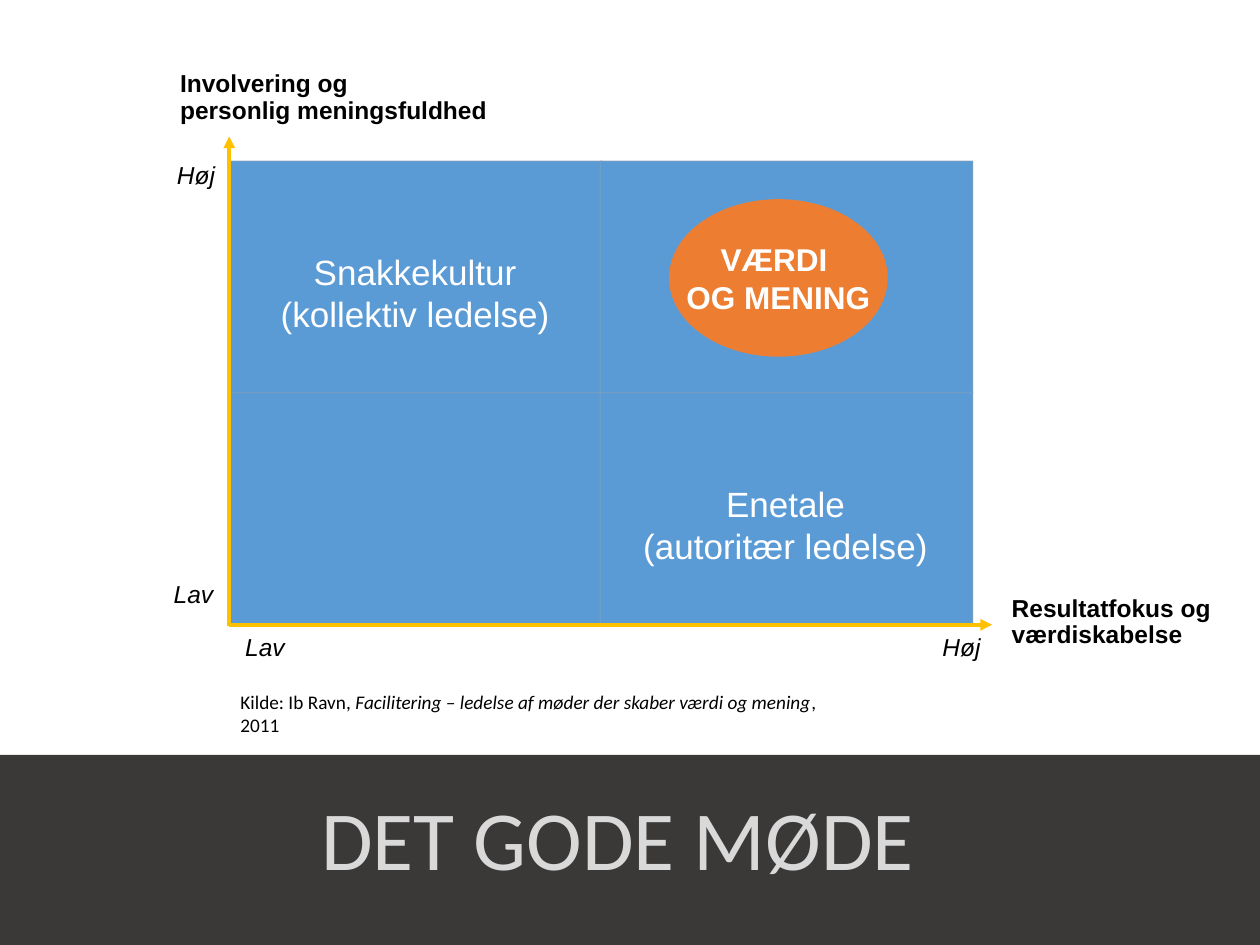
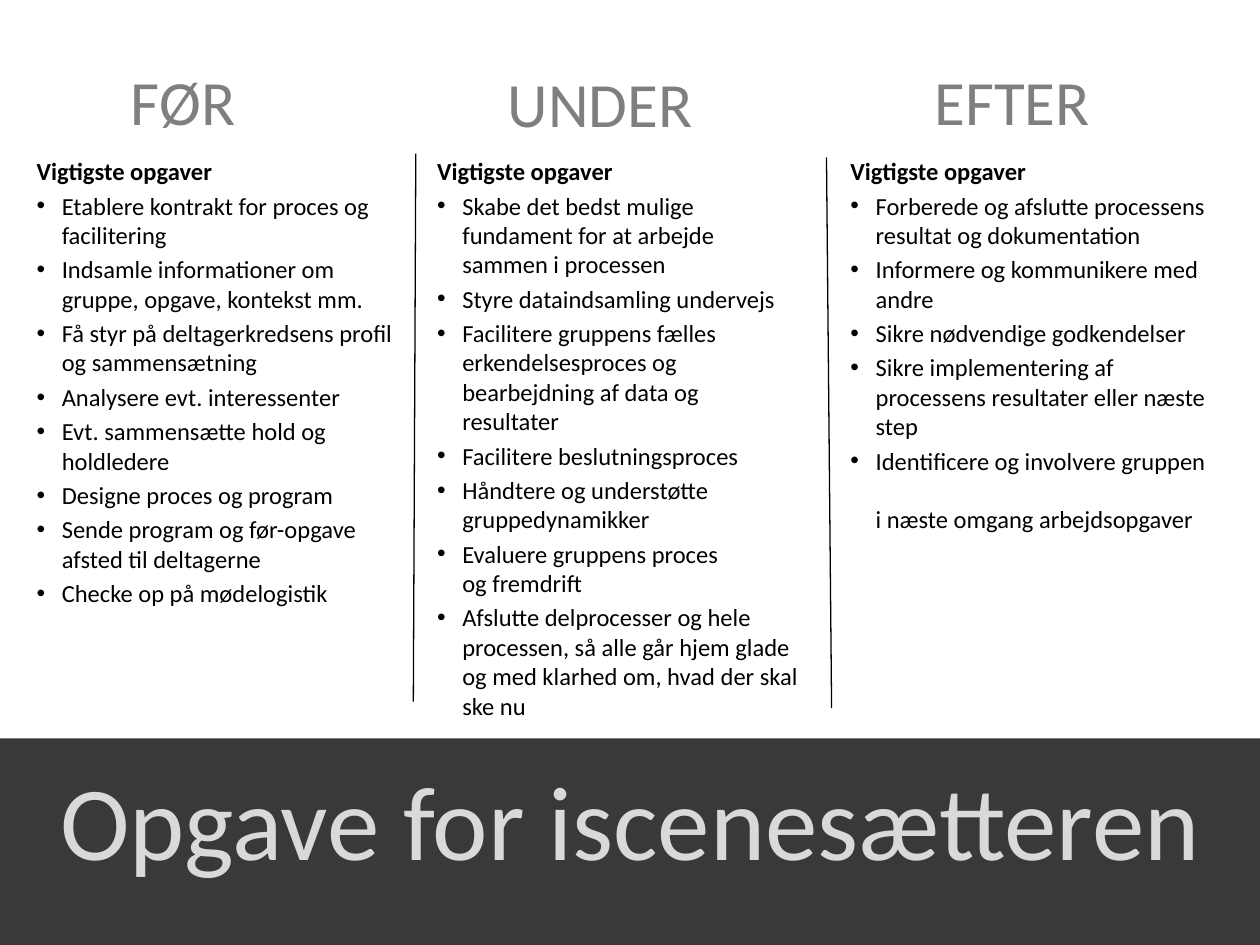
from copy import deepcopy

from lxml import etree
from pptx import Presentation
from pptx.dml.color import RGBColor
from pptx.enum.shapes import MSO_CONNECTOR, MSO_SHAPE
from pptx.enum.text import MSO_ANCHOR, MSO_AUTO_SIZE, PP_ALIGN
from pptx.oxml.ns import qn
from pptx.util import Pt

RECT, OVAL = MSO_SHAPE.RECTANGLE, MSO_SHAPE.OVAL
STRAIGHT = MSO_CONNECTOR.STRAIGHT
LEFT, CENTER, RIGHT = PP_ALIGN.LEFT, PP_ALIGN.CENTER, PP_ALIGN.RIGHT
MIDDLE = MSO_ANCHOR.MIDDLE
GROW = MSO_AUTO_SIZE.SHAPE_TO_FIT_TEXT

WIDTH, HEIGHT = 720, 540


def font(name, size, color, **extra):
    return {"name": name, "size": Pt(size), "color": color, **extra}


class Theme:
    BLACK = RGBColor.from_string("000000")
    WHITE = RGBColor.from_string("FFFFFF")
    BAND = RGBColor.from_string("3B3838")
    TITLE = RGBColor.from_string("D9D9D9")
    HEADING = RGBColor.from_string("7F7F7F")
    QUADRANT = RGBColor.from_string("5B9BD5")
    QUADRANT_EDGE = RGBColor.from_string("A5A5A5")
    HIGHLIGHT = RGBColor.from_string("ED7D31")
    AXIS = RGBColor.from_string("FFC000")

    FONTS = {
        "title": font("Calibri", 48, TITLE),
        "big_title": font("Calibri", 60, TITLE),
        "heading": font("Calibri", 36, HEADING),
        "task": font("Calibri", 14, BLACK),
        "source": font("Calibri", 11, BLACK),
        "quadrant": font("Arial", 20, WHITE),
        "highlight": font("Arial", 18, WHITE, bold=True),
        "axis": font("Arial", 14, BLACK, bold=True),
        "scale": font("Arial", 14, BLACK, italic=True),
    }
    PARAGRAPHS = {
        "source": {"space_before": Pt(6)},
        "task": {"space_before": Pt(2.8)},
        "axis": {"line_spacing": 0.9},
        "scale": {"line_spacing": 0.9},
    }
    THIN, THICK = Pt(0.75), Pt(2.25)
    BULLET_INDENT = Pt(14.4)


class Deck:
    """Holds the theme and the slide that is being built."""

    def __init__(self, theme):
        self.theme = theme
        self.prs = Presentation()
        self.prs.slide_width, self.prs.slide_height = Pt(WIDTH), Pt(HEIGHT)
        self.slide = None

    def new_slide(self):
        self.slide = self.prs.slides.add_slide(self.prs.slide_layouts[6])

    def shape(self, kind, box, fill, edge=None):
        sp = self.slide.shapes.add_shape(kind, *map(Pt, box))
        sp.shadow.inherit = False
        sp.fill.solid()
        sp.fill.fore_color.rgb = fill
        if edge is None:
            sp.line.fill.background()
        else:
            sp.line.color.rgb = edge
            sp.line.width = self.theme.THIN
            # A faint edge lets the fill shine through
            clr = sp._element.spPr.find(f"{qn('a:ln')}//{qn('a:srgbClr')}")
            etree.SubElement(clr, qn("a:alpha"), val="30000")
        return sp

    def line(self, start, end, color, width, arrow=False):
        cx = self.slide.shapes.add_connector(STRAIGHT, *map(Pt, start + end))
        cx.line.color.rgb = color
        cx.line.width = width
        spPr = cx._element.spPr
        if arrow:
            etree.SubElement(spPr.find(qn("a:ln")), qn("a:tailEnd"),
                             type="triangle")
        etree.SubElement(spPr, qn("a:effectLst"))

    def text(self, box, paragraphs, style, align=LEFT, wrap=True, inset=True):
        tb = self.slide.shapes.add_textbox(*map(Pt, box))
        tf = tb.text_frame
        tf.word_wrap = wrap
        tf.auto_size = GROW
        if not inset:
            for side in ("left", "top", "right", "bottom"):
                setattr(tf, f"margin_{side}", 0)
        self.fill_frame(tf, paragraphs, style, align)
        return tf

    def fill_frame(self, tf, paragraphs, style, align=LEFT):
        """Fill a frame; a paragraph is a string or a list of (text, format)."""
        for i, content in enumerate(paragraphs):
            p = tf.paragraphs[0] if i == 0 else tf.add_paragraph()
            p.alignment = align
            for key, value in self.theme.PARAGRAPHS.get(style, {}).items():
                setattr(p, key, value)
            if isinstance(content, str):
                p.text = content
                formats = [{}] * len(p.runs)
            else:
                for words, _ in content:
                    p.add_run().text = words
                formats = [fmt for _, fmt in content]
            for r, fmt in zip(p.runs, formats):
                for key, value in {**self.theme.FONTS[style], **fmt}.items():
                    if key == "color":
                        r.font.color.rgb = value
                    else:
                        setattr(r.font, key, value)
            # Line breaks take the size of the text around them
            for br in p._p.findall(qn("a:br")):
                br.append(deepcopy(p.runs[0]._r.find(qn("a:rPr"))))

    def bullet(self, p):
        indent = self.theme.BULLET_INDENT
        pPr = p._p.get_or_add_pPr()
        pPr.set("marL", str(indent))
        pPr.set("indent", str(-indent))
        etree.SubElement(pPr, qn("a:buFont"), typeface="Arial")
        etree.SubElement(pPr, qn("a:buChar"), char="•")

    def title_band(self, title, style, band_top, title_box):
        box = (0, band_top, WIDTH, HEIGHT - band_top)
        self.shape(RECT, box, self.theme.BAND)
        self.text(title_box, [title], style, CENTER)

    def task_column(self, heading, heading_at, tasks, left, width):
        box = (left, 89.3, width, 265)
        tf = self.text(box, [[("Vigtigste opgaver", {"bold": True})], *tasks],
                       "task", inset=False)
        for p in tf.paragraphs[1:]:
            self.bullet(p)
        self.text((*heading_at, 155, 51), [heading], "heading")


def meeting_matrix(deck):
    theme = deck.theme
    deck.new_slide()
    left, top, step_x, step_y = 131, 92, 212, 132
    for col in range(2):
        for row in (1, 0):
            box = (left + col * step_x, top + row * step_y, 213, 132.5)
            deck.shape(RECT, box, theme.QUADRANT, theme.QUADRANT_EDGE)

    sp = deck.shape(OVAL, (382.3, 113.8, 125, 90), theme.HIGHLIGHT)
    tf = sp.text_frame
    tf.word_wrap = False
    tf.vertical_anchor = MIDDLE
    deck.fill_frame(tf, ["VÆRDI \vOG MENING"], "highlight", CENTER)

    for box, lines in (
        ((152.6, 139.7, 169.2, 56), ["Snakkekultur", "(kollektiv ledelse)"]),
        ((360, 272.2, 177.8, 56), ["Enetale", "(autoritær ledelse)"]),
    ):
        deck.text(box, lines, "quadrant", CENTER, wrap=False)

    origin_y = 357
    for start, end in (
        ((left, origin_y + 1), (left, 78)),
        ((left, origin_y), (567, origin_y)),
    ):
        deck.line(start, end, theme.AXIS, theme.THICK, arrow=True)

    deck.text((95.8, 37.4, 190.8, 38.2),
              ["Involvering og", "personlig meningsfuldhed"], "axis", wrap=False)
    deck.text((571, 337, 137.5, 38.2), ["Resultatfokus og værdiskabelse"], "axis")
    for x, y, word, align in (
        (90, 90, "Høj", RIGHT),
        (89, 329, "Lav", RIGHT),
        (133, 359.3, "Lav", LEFT),
        (531.4, 359.3, "Høj", LEFT),
    ):
        deck.text((x, y, 40, 23), [word], "scale", align, wrap=False)

    deck.title_band("DET GODE MØDE", "title", 431.3, (0, 445.7, 706, 65.5))
    deck.text((130.3, 391, 360, 33.8), [[
        ("Kilde: Ib Ravn, ", {}),
        ("Facilitering – ledelse af møder der skaber værdi og mening",
         {"italic": True}),
        (", 2011", {}),
    ]], "source")


def facilitator_tasks(deck):
    theme = deck.theme
    deck.new_slide()
    deck.title_band("Opgave for iscenesætteren", "big_title", 422,
                    (0, 428.4, WIDTH, 80))
    deck.task_column("FØR", (67.7, 32.4), [
        "Etablere kontrakt for proces og facilitering",
        "Indsamle informationer om gruppe, opgave, kontekst mm.",
        "Få styr på deltagerkredsens profil og sammensætning",
        "Analysere evt. interessenter",
        "Evt. sammensætte hold og holdledere",
        "Designe proces og program",
        "Sende program og før-opgave afsted til deltagerne",
        "Checke op på mødelogistik",
    ], 20.9, 209.5)
    deck.task_column("UNDER", (283, 33.1), [
        "Skabe det bedst mulige fundament for at arbejde sammen i processen",
        "Styre dataindsamling undervejs",
        "Facilitere gruppens fælles erkendelsesproces og bearbejdning af data "
        "og resultater",
        "Facilitere beslutningsproces",
        "Håndtere og understøtte gruppedynamikker",
        "Evaluere gruppens proces \vog fremdrift",
        "Afslutte delprocesser og hele processen, så alle går hjem glade og "
        "med klarhed om, hvad der skal ske nu",
    ], 249.8, 208)
    deck.task_column("EFTER", (527, 32.4), [
        "Forberede og afslutte processens resultat og dokumentation",
        "Informere og kommunikere med andre",
        "Sikre nødvendige godkendelser",
        "Sikre implementering af processens resultater eller næste step",
        "Identificere og involvere gruppen \vi næste omgang arbejdsopgaver",
    ], 486, 205.5)
    for start, end in (
        ((237.6, 87.8), (236.2, 401)),
        ((472.3, 90), (475.2, 404.6)),
    ):
        deck.line(start, end, theme.BLACK, theme.THIN)


def main():
    deck = Deck(Theme)
    meeting_matrix(deck)
    facilitator_tasks(deck)
    deck.prs.save("out.pptx")


if __name__ == "__main__":
    main()
